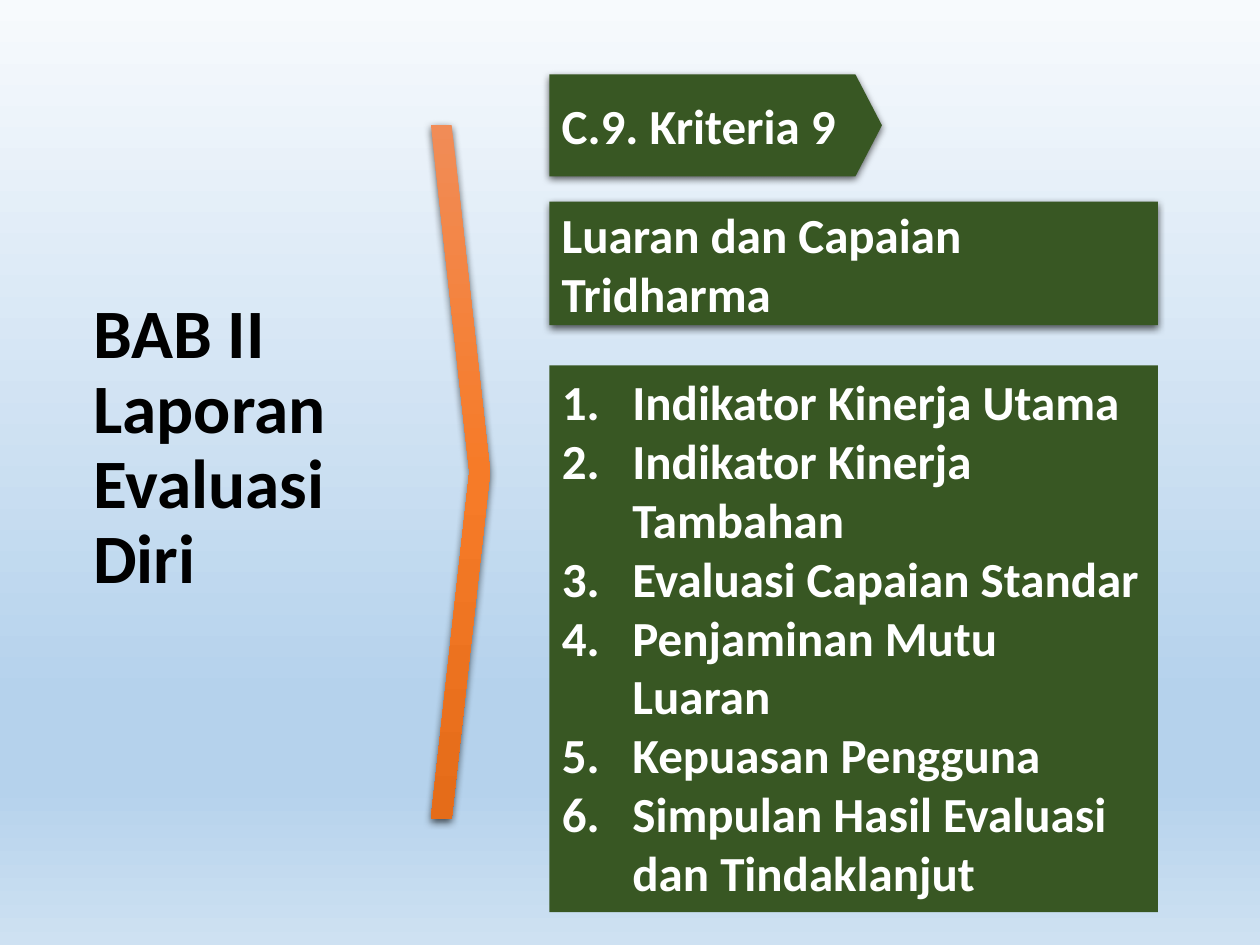
from lxml.etree import SubElement
from pptx import Presentation
from pptx.dml.color import RGBColor
from pptx.enum.shapes import MSO_SHAPE
from pptx.enum.text import MSO_ANCHOR, MSO_AUTO_SIZE, PP_ALIGN
from pptx.oxml import parse_xml
from pptx.oxml.ns import nsdecls, qn
from pptx.util import Inches, Pt

TITLE = "BAB II\vLaporan Evaluasi Diri"
CRITERION = "C.9. Kriteria 9"
TOPIC = "Luaran dan Capaian Tridharma"
ITEMS = [
    "Indikator Kinerja Utama",
    "Indikator Kinerja Tambahan",
    "Evaluasi Capaian Standar",
    "Penjaminan Mutu Luaran",
    "Kepuasan Pengguna",
    "Simpulan Hasil Evaluasi dan Tindaklanjut",
]

FONT = "Calibri"
BLACK = RGBColor(0x00, 0x00, 0x00)
WHITE = RGBColor(0xFF, 0xFF, 0xFF)
GREEN = RGBColor(0x38, 0x57, 0x23)
SKY = [(0, "F7FAFD"), (74, "B5D2EC"), (83, "B5D2EC"), (100, "CEE1F2")]
ORANGE = [(0, "F18C57"), (50, "F67B28"), (100, "E56C19")]

COLUMN_LEFT, COLUMN_WIDTH = 4.36, 4.83
LIST_INDENT = Inches(0.56)


def place(sp, left, top, width, height):
    sp.left, sp.top = Inches(left), Inches(top)
    sp.width, sp.height = Inches(width), Inches(height)


def set_gradient(fill, element, stops):
    """Fill from top to bottom with any number of (percent, colour) stops."""
    fill.gradient()
    fill.gradient_angle = 270
    gs_list = element.find(".//" + qn("a:gsLst"))
    gs_list.clear()
    for percent, color in stops:
        gs = SubElement(gs_list, qn("a:gs"), pos=str(percent * 1000))
        SubElement(gs, qn("a:srgbClr"), val=color)


def add_shadow(sp):
    sp.element.spPr.append(parse_xml(
        f'<a:effectLst {nsdecls("a")}>'
        f'<a:outerShdw blurRad="{Pt(4.5)}" dist="{Pt(1.5)}" dir="5400000" rotWithShape="0">'
        '<a:srgbClr val="000000"><a:alpha val="63000"/></a:srgbClr>'
        '</a:outerShdw></a:effectLst>'))


def format_text(tf, size, color, anchor=MSO_ANCHOR.MIDDLE):
    tf.word_wrap = True
    tf.auto_size = MSO_AUTO_SIZE.NONE
    tf.vertical_anchor = anchor
    for p in tf.paragraphs:
        p.alignment = PP_ALIGN.LEFT
        p.space_before = Pt(0)
        for r in p.runs:
            r.font.name, r.font.size = FONT, Pt(size)
            r.font.bold = True
            r.font.color.rgb = color


def add_shadowed_shape(slide, kind, *box):
    sp = slide.shapes.add_shape(kind, *map(Inches, box))
    sp.line.fill.background()
    add_shadow(sp)
    return sp


def add_heading(slide, kind, text, top, width, height):
    sp = add_shadowed_shape(slide, kind, COLUMN_LEFT, top, width, height)
    sp.fill.solid()
    sp.fill.fore_color.rgb = GREEN
    sp.text_frame.text = text
    format_text(sp.text_frame, 28, WHITE)
    return sp


def number_paragraph(p):
    pPr = p._p.get_or_add_pPr()
    pPr.set("marL", str(LIST_INDENT))
    pPr.set("indent", str(-LIST_INDENT))
    SubElement(pPr, qn("a:buFont"), typeface="+mj-lt")
    SubElement(pPr, qn("a:buAutoNum"), type="arabicPeriod")


def main():
    prs = Presentation()
    prs.slide_width, prs.slide_height = Inches(10), Inches(7.5)
    slide = prs.slides.add_slide(prs.slide_layouts[1])
    set_gradient(slide.background.fill, slide.element, SKY)

    title = slide.shapes.title
    place(title, 0.64, 2.24, 2.58, 2.64)
    title.text_frame.text = TITLE
    format_text(title.text_frame, 39.6, BLACK)
    title.text_frame.paragraphs[0].line_spacing = 0.9

    chevron = add_shadowed_shape(slide, MSO_SHAPE.CHEVRON, 3.42, 0.99, 0.47, 5.51)
    chevron.adjustments[0] = 0.65
    set_gradient(chevron.fill, chevron.element, ORANGE)

    add_heading(slide, MSO_SHAPE.RECTANGLE, TOPIC, 1.6, COLUMN_WIDTH, 0.98)
    tag = add_heading(slide, MSO_SHAPE.PENTAGON, CRITERION, 0.59, 2.64, 0.81)
    tag.adjustments[0] = 0.26

    body = slide.placeholders[1]
    place(body, COLUMN_LEFT, 2.9, COLUMN_WIDTH, 4.34)
    body.fill.solid()
    body.fill.fore_color.rgb = GREEN
    tf = body.text_frame
    tf.text = "\n".join(ITEMS)
    for p in tf.paragraphs:
        number_paragraph(p)
    format_text(tf, 28, WHITE, MSO_ANCHOR.TOP)

    prs.save("out.pptx")


if __name__ == "__main__":
    main()
